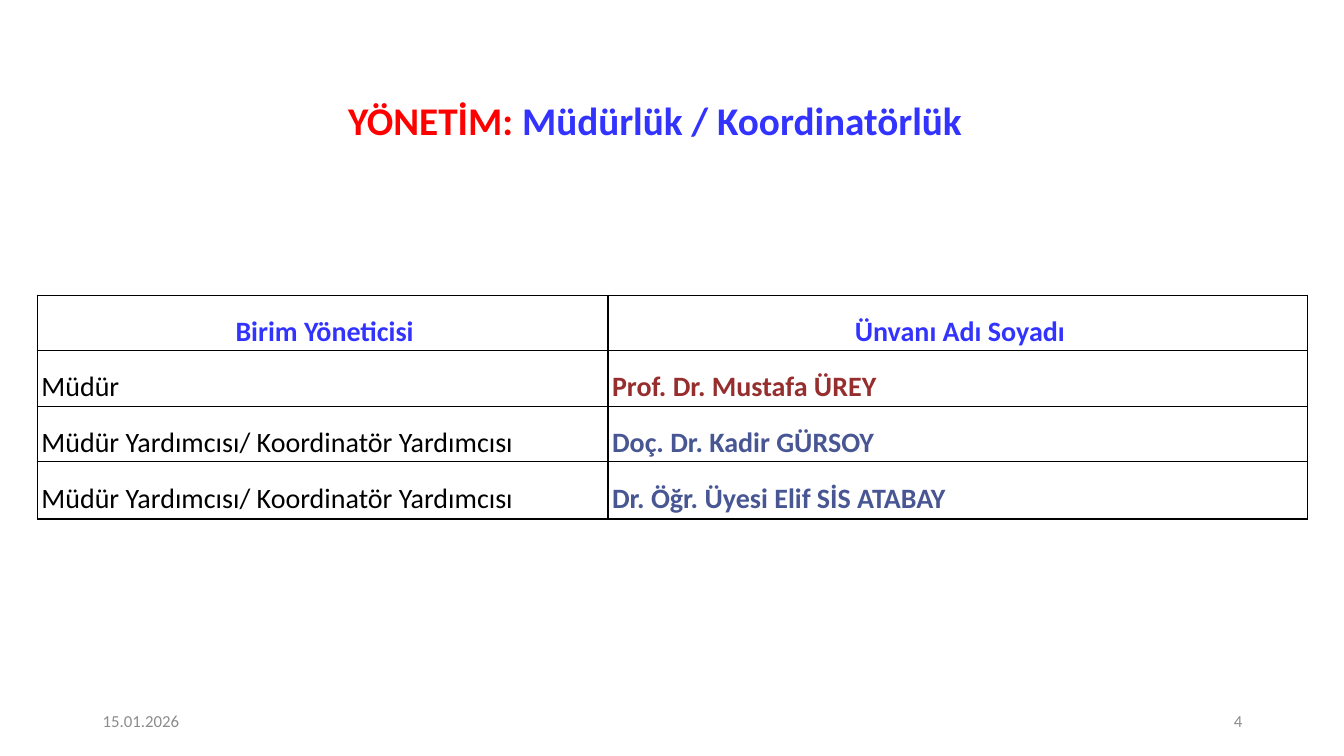
"""Build the management table slide."""
from pptx import Presentation
from pptx.dml.color import RGBColor
from pptx.enum import text
from pptx.oxml import parse_xml
from pptx.oxml.ns import nsdecls
from pptx.util import Inches, Pt

FONT = "Calibri"
RED, BLUE, BLACK, GREY = "FF0000", "3333FF", "000000", "8C8C8C"
MAROON, SLATE = "962E2E", "485793"
LEFT, CENTER, RIGHT = text.PP_ALIGN.LEFT, text.PP_ALIGN.CENTER, text.PP_ALIGN.RIGHT
HEADINGS = ("Birim Yöneticisi", "Ünvanı Adı Soyadı")
MANAGERS = (
    ("Müdür", "Prof. Dr. Mustafa ÜREY", MAROON),
    ("Müdür Yardımcısı/ Koordinatör Yardımcısı", "Doç. Dr. Kadir GÜRSOY", SLATE),
    ("Müdür Yardımcısı/ Koordinatör Yardımcısı", "Dr. Öğr. Üyesi Elif SİS ATABAY", SLATE),
)
COLUMN_WIDTHS = (5.66, 6.94)
ROW_HEIGHTS = (0.55, 0.55, 0.55, 0.57)


def style_font(font, size, color, bold=False):
    """Set the face, size, colour and weight of a font."""
    font.name, font.size, font.bold = FONT, Pt(size), bold
    font.color.rgb = RGBColor.from_string(color)


def add_title(slide):
    """Place and fill the two-coloured title."""
    title = slide.shapes.title
    title.left, title.top = Inches(1.14), Inches(0.84)
    title.width, title.height = Inches(10.71), Inches(0.76)
    title.text_frame.vertical_anchor = text.MSO_ANCHOR.MIDDLE
    heading = title.text_frame.paragraphs[0]
    heading.alignment, heading.line_spacing = CENTER, 0.9
    for words, color in (("YÖNETİM: ", RED), ("Müdürlük / Koordinatörlük", BLUE)):
        run = heading.add_run()
        run.text = words
        style_font(run.font, 28, color, True)


def add_borders(cell):
    """Draw a thin black line on every side of a cell."""
    properties = cell._tc.get_or_add_tcPr()
    for side in "LRTB":
        properties.append(parse_xml(
            f'<a:ln{side} {nsdecls("a")} w="12700"><a:solidFill>'
            f'<a:srgbClr val="{BLACK}"/></a:solidFill></a:ln{side}>'))


def fill_cell(cell, words, color, bold, alignment):
    """Write and format one table cell."""
    cell.margin_left = cell.margin_right = cell.margin_top = cell.margin_bottom = 0
    cell.vertical_anchor = text.MSO_ANCHOR.MIDDLE
    add_borders(cell)
    cell.fill.background()
    cell.text = words
    entry = cell.text_frame.paragraphs[0]
    entry.alignment, entry.line_spacing = alignment, 1.5
    entry._p.get_or_add_pPr().set("marL", str(Inches(0.04)))
    style_font(entry.font, 20, color, bold)


def add_managers(slide):
    """Add the table of managers."""
    managers = slide.shapes.add_table(
        len(ROW_HEIGHTS), len(COLUMN_WIDTHS), Inches(0.37), Inches(2.93),
        Inches(sum(COLUMN_WIDTHS)), Inches(sum(ROW_HEIGHTS))).table
    managers.first_row = managers.horz_banding = False
    for column, width in zip(managers.columns, COLUMN_WIDTHS):
        column.width = Inches(width)
    for row, height in zip(managers.rows, ROW_HEIGHTS):
        row.height = Inches(height)
    for index, heading in enumerate(HEADINGS):
        fill_cell(managers.cell(0, index), heading, BLUE, True, CENTER)
    for index, (role, person, color) in enumerate(MANAGERS, 1):
        fill_cell(managers.cell(index, 0), role, BLACK, False, LEFT)
        fill_cell(managers.cell(index, 1), person, color, True, LEFT)


def add_footer(slide, left, words, alignment):
    """Add one grey footer text."""
    frame = slide.shapes.add_textbox(
        Inches(left), Inches(6.95), Inches(3), Inches(0.4)).text_frame
    frame.word_wrap = True
    frame.vertical_anchor = text.MSO_ANCHOR.MIDDLE
    footer = frame.paragraphs[0]
    footer.text, footer.alignment = words, alignment
    style_font(footer.font, 12, GREY)


def main():
    """Build and save the slide."""
    deck = Presentation()
    deck.slide_width, deck.slide_height = Inches(13.33), Inches(7.5)
    slide = deck.slides.add_slide(deck.slide_layouts[5])
    add_title(slide)
    add_managers(slide)
    add_footer(slide, 0.92, "15.01.2026", LEFT)
    add_footer(slide, 9.42, "4", RIGHT)
    deck.save("out.pptx")


if __name__ == "__main__":
    main()
